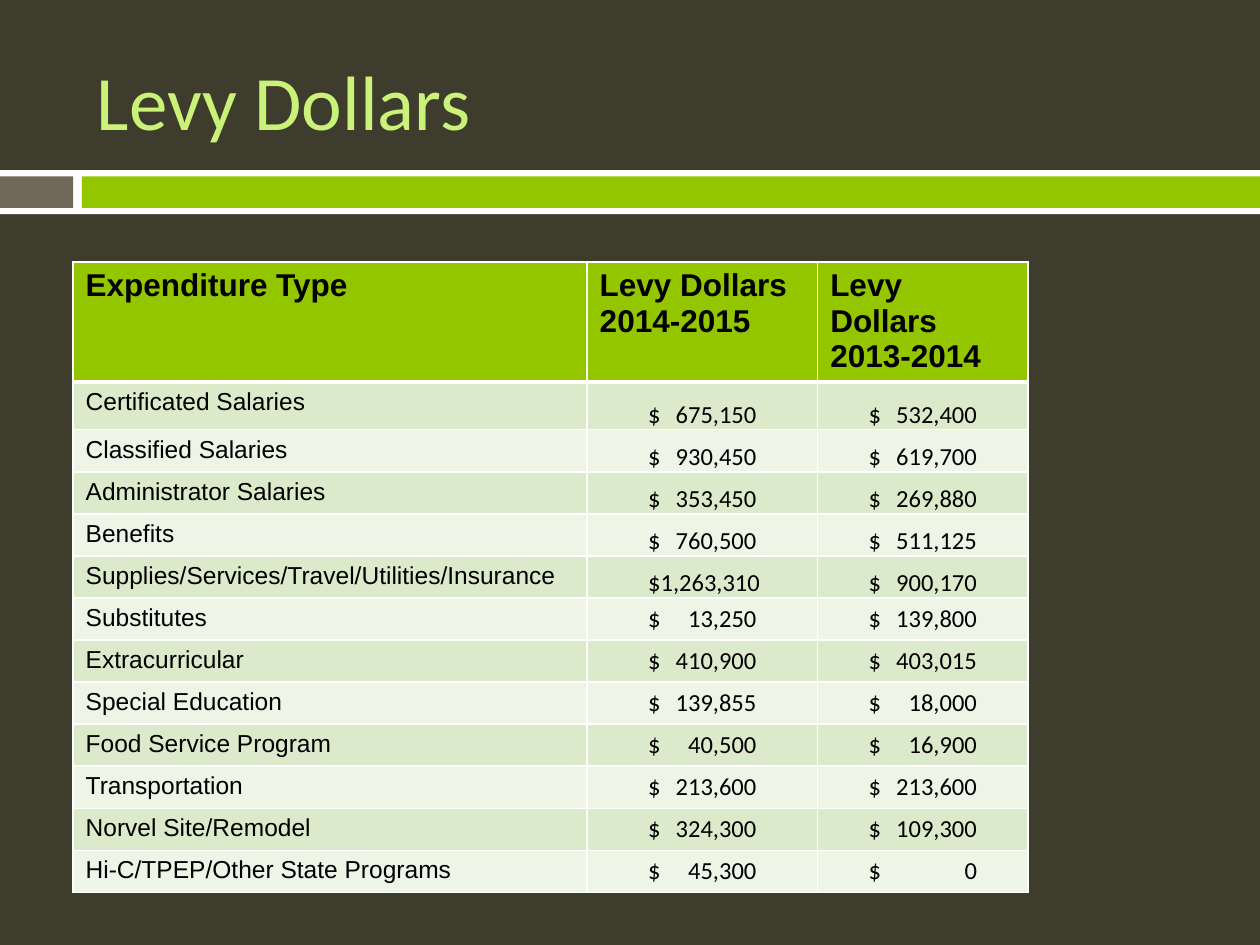
from typing import NamedTuple

from lxml.etree import SubElement
from pptx import Presentation
from pptx.dml.color import RGBColor
from pptx.enum.shapes import MSO_SHAPE
from pptx.enum.text import MSO_ANCHOR
from pptx.oxml.ns import qn
from pptx.util import Inches, Pt

SLIDE_WIDTH, SLIDE_HEIGHT = 10, 7.5
COLOURS = {
    "background": "3E3D2D", "white": "FFFFFF", "taupe": "71685A",
    "green": "94C600", "title": "CAF278", "text": "000000",
    "band_dark": "DCEACC", "band_light": "EEF5E7",
}
COLUMN_WIDTHS = (4.08, 1.83, 1.67)
HEADER_HEIGHT, FIRST_ROW_HEIGHT, ROW_HEIGHT = 0.6, 0.38, 0.33
AMOUNT_WIDTH = 0.86  # from the dollar sign to the last digit
BOTTOM_ANCHORED_ROWS = 5


class Bar(NamedTuple):
    left: float  # shares of the slide's size
    top: float
    width: float
    height: float
    colour: str


class Expense(NamedTuple):
    name: str
    current: str
    previous: str


BARS = (
    Bar(0, 0.18, 1, 0.35 / SLIDE_HEIGHT, "white"),
    Bar(0, 1.4 / SLIDE_HEIGHT, 0.058, 0.25 / SLIDE_HEIGHT, "taupe"),
    Bar(0.065, 1.4 / SLIDE_HEIGHT, 0.935, 0.25 / SLIDE_HEIGHT, "green"),
)
HEADERS = ("Expenditure Type", "Levy Dollars\n2014-2015", "Levy Dollars\n2013-2014")
EXPENSES = (
    Expense("Certificated Salaries", "$\t675,150", "$\t532,400"),
    Expense("Classified Salaries", "$\t930,450", "$\t619,700"),
    Expense("Administrator Salaries", "$\t353,450", "$\t269,880"),
    Expense("Benefits", "$\t760,500", "$\t511,125"),
    Expense("Supplies/Services/Travel/Utilities/Insurance", "$1,263,310", "$\t900,170"),
    Expense("Substitutes", "$\t13,250", "$\t139,800"),
    Expense("Extracurricular", "$\t410,900", "$\t403,015"),
    Expense("Special Education", "$\t139,855", "$\t18,000"),
    Expense("Food Service Program", "$\t40,500", "$\t16,900"),
    Expense("Transportation", "$\t213,600", "$\t213,600"),
    Expense("Norvel Site/Remodel", "$\t324,300", "$\t109,300"),
    Expense("Hi-C/TPEP/Other State Programs", "$\t45,300", "$\t0"),
)


def colour(name: str) -> RGBColor:
    return RGBColor.from_string(COLOURS[name])


def style_text(frame, font: str, size: float, colour_name: str, bold: bool = False) -> None:
    for para in frame.paragraphs:
        for span in para.runs:
            span.font.name = font
            span.font.size = Pt(size)
            span.font.bold = bold
            span.font.color.rgb = colour(colour_name)


def draw_bar(page, bar: Bar) -> None:
    shape = page.shapes.add_shape(
        MSO_SHAPE.RECTANGLE,
        Inches(bar.left * SLIDE_WIDTH), Inches(bar.top * SLIDE_HEIGHT),
        Inches(bar.width * SLIDE_WIDTH), Inches(bar.height * SLIDE_HEIGHT))
    shape.shadow.inherit = False
    shape.fill.solid()
    shape.fill.fore_color.rgb = colour(bar.colour)
    shape.line.fill.background()


def draw_title(page, text: str) -> None:
    box = page.shapes.add_textbox(Inches(0.67), Inches(0.25), Inches(8.92), Inches(1.08))
    frame = box.text_frame
    frame.word_wrap = True
    frame.vertical_anchor = MSO_ANCHOR.MIDDLE
    frame.text = text
    style_text(frame, "Calibri", 44, "title")


def style_cell(cell, fill_name: str, top: float = 1, bottom: float = 1) -> None:
    """Borders come before the fill in the cell's properties."""
    properties = cell._tc.get_or_add_tcPr()
    for side, points in (("L", 1), ("R", 1), ("T", top), ("B", bottom)):
        line = SubElement(properties, qn(f"a:ln{side}"), w=str(Pt(points)))
        fill = SubElement(line, qn("a:solidFill"))
        SubElement(fill, qn("a:srgbClr"), val=COLOURS["white"])
    cell.fill.solid()
    cell.fill.fore_color.rgb = colour(fill_name)


def fill_amount(cell, text: str, column_width: float, at_bottom: bool) -> None:
    """Centre a block with the dollar sign at its left and the digits at its right."""
    cell.text_frame.text = text
    cell.margin_left = Inches((column_width - AMOUNT_WIDTH) / 2)
    cell.margin_right = 0
    if at_bottom:
        cell.vertical_anchor = MSO_ANCHOR.BOTTOM
        cell.margin_top = Inches(0.01)
        cell.margin_bottom = 0
    properties = cell.text_frame.paragraphs[0]._p.get_or_add_pPr()
    tabs = SubElement(properties, qn("a:tabLst"))
    SubElement(tabs, qn("a:tab"), pos=str(Inches(AMOUNT_WIDTH)), algn="r")
    style_text(cell.text_frame, "Calibri", 14, "text")


def draw_table(page) -> None:
    heights = [HEADER_HEIGHT, FIRST_ROW_HEIGHT] + [ROW_HEIGHT] * (len(EXPENSES) - 1)
    table = page.shapes.add_table(
        len(heights), len(COLUMN_WIDTHS), Inches(0.58), Inches(2.08),
        Inches(sum(COLUMN_WIDTHS)), Inches(sum(heights))).table
    for column, width in zip(table.columns, COLUMN_WIDTHS):
        column.width = Inches(width)
    for row, height in zip(table.rows, heights):
        row.height = Inches(height)

    # Header row
    for index, header in enumerate(HEADERS):
        cell = table.cell(0, index)
        cell.text_frame.text = header
        cell.margin_bottom = 0
        style_text(cell.text_frame, "Arial", 18, "text", bold=True)
        style_cell(cell, "green", bottom=3)

    # Expense rows
    for number, expense in enumerate(EXPENSES, start=1):
        band = "band_dark" if number % 2 else "band_light"
        for index, text in enumerate(expense):
            cell = table.cell(number, index)
            if index == 0:
                cell.text_frame.text = text
                style_text(cell.text_frame, "Arial", 14, "text")
            else:
                fill_amount(cell, text, COLUMN_WIDTHS[index], number <= BOTTOM_ANCHORED_ROWS)
            style_cell(cell, band, top=3 if number == 1 else 1)


def main() -> None:
    deck = Presentation()
    deck.slide_width, deck.slide_height = Inches(SLIDE_WIDTH), Inches(SLIDE_HEIGHT)
    page = deck.slides.add_slide(deck.slide_layouts[6])
    page.background.fill.solid()
    page.background.fill.fore_color.rgb = colour("background")
    for bar in BARS:
        draw_bar(page, bar)
    draw_title(page, "Levy Dollars")
    draw_table(page)
    deck.save("out.pptx")


if __name__ == "__main__":
    main()
